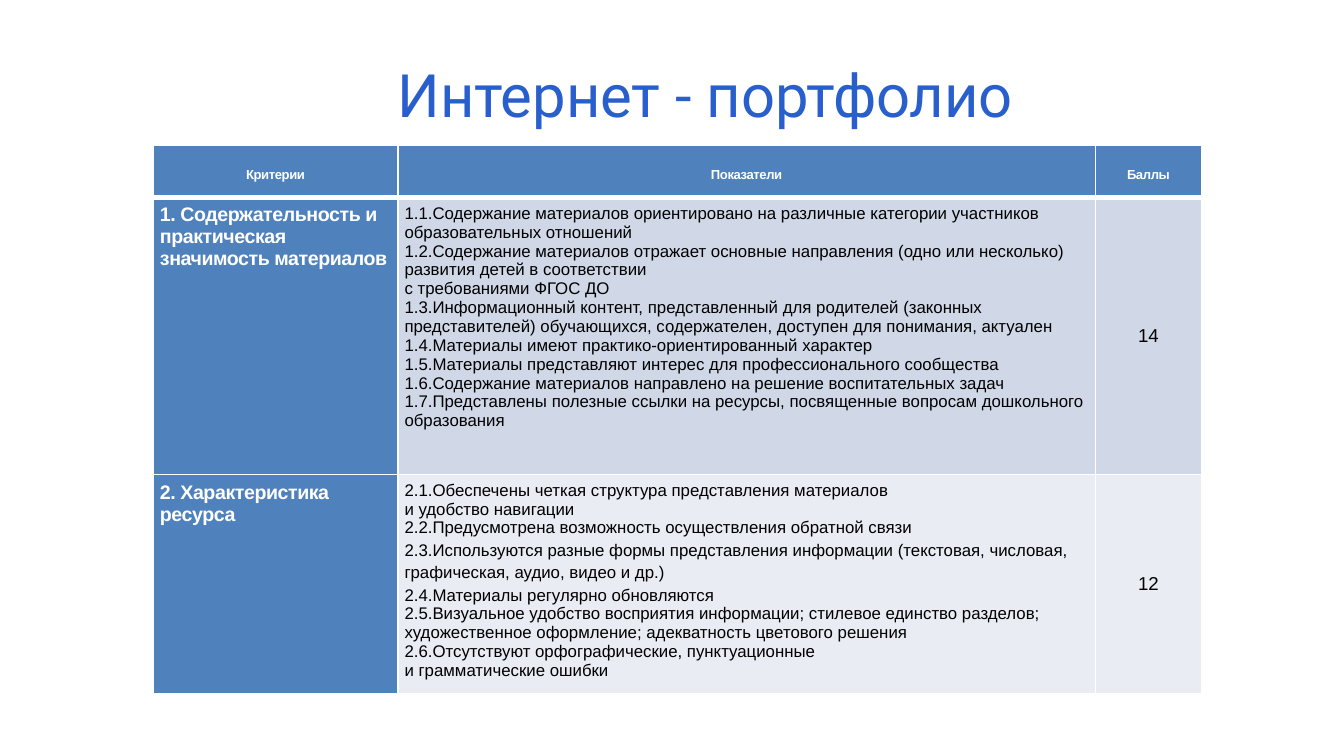
from lxml.etree import SubElement
from pptx import Presentation
from pptx.dml.color import RGBColor
from pptx.enum.text import MSO_ANCHOR, PP_ALIGN
from pptx.oxml.ns import qn
from pptx.util import Inches, Pt

WHITE = RGBColor(0xFF, 0xFF, 0xFF)
BLACK = RGBColor(0, 0, 0)
TITLE_BLUE = RGBColor(0x29, 0x5F, 0xCC)
HEADER_BLUE = RGBColor(0x4F, 0x81, 0xBD)
BAND_DARK = RGBColor(0xD0, 0xD8, 0xE7)
BAND_LIGHT = RGBColor(0xE9, 0xEC, 0xF3)

THIN, THICK = 0.96, 3
COLUMN_WIDTHS = [1.82, 5.19, 0.79]
ROW_HEIGHTS = [0.39, 2.06, 1.63]
HEADERS = ["Критерии", "Показатели", "Баллы"]

# Criterion, indicators, score, band colour
CRITERIA = [
    ("1.\u00a0Содержательность и практическая значимость материалов", [
        "1.1.Содержание материалов ориентировано на различные категории участников образовательных отношений",
        "1.2.Содержание материалов отражает основные направления (одно или несколько) "
        "развития детей в соответствии\vс требованиями ФГОС ДО",
        "1.3.Информационный контент, представленный для родителей (законных представителей) "
        "обучающихся, содержателен, доступен для понимания, актуален",
        "1.4.Материалы имеют практико-ориентированный характер",
        "1.5.Материалы представляют интерес для профессионального сообщества",
        "1.6.Содержание материалов направлено на решение воспитательных задач",
        "1.7.Представлены полезные ссылки на ресурсы, посвященные вопросам дошкольного образования",
    ], "14", BAND_DARK),
    ("2.\u00a0Характеристика ресурса", [
        "2.1.Обеспечены четкая структура представления материалов\vи удобство навигации",
        "2.2.Предусмотрена возможность осуществления обратной связи",
        "2.3.Используются разные формы представления информации "
        "(текстовая, числовая, графическая, аудио, видео и др.)",
        "2.4.Материалы регулярно обновляются",
        "2.5.Визуальное удобство восприятия информации; стилевое единство разделов; "
        "художественное оформление; адекватность цветового решения",
        "2.6.Отсутствуют орфографические, пунктуационные\vи грамматические ошибки",
    ], "12", BAND_LIGHT),
]
SPACED_LINES = ("2.\u00a0", "2.3.", "2.4.")  # paragraphs set on exact 12 pt lines


def add_title(slide, text):
    title = slide.shapes.title
    title.left, title.top = Inches(0.5), Inches(0.23)
    title.width, title.height = Inches(9), Inches(0.94)
    tf = title.text_frame
    tf.vertical_anchor = MSO_ANCHOR.MIDDLE
    p = tf.paragraphs[0]
    p.text = text
    p.alignment = PP_ALIGN.CENTER
    pPr = p._p.get_or_add_pPr()
    pPr.set("marL", str(Inches(0.5)))
    pPr.set("indent", "0")
    p.font.name, p.font.size = "Roboto", Pt(32)
    p.font.color.rgb = TITLE_BLUE


def set_borders(cell, top, bottom):
    """Draw white cell borders; call before the fill, which must follow them."""
    tcPr = cell._tc.get_or_add_tcPr()
    for side, width in zip("LRTB", (THIN, THIN, top, bottom)):
        ln = SubElement(tcPr, qn(f"a:ln{side}"), w=str(Pt(width)))
        fill = SubElement(ln, qn("a:solidFill"))
        SubElement(fill, qn("a:srgbClr"), val=str(WHITE))


def fill_cell(cell, lines, size, fill, heading=False, centered=False, top=THIN, bottom=THIN):
    set_borders(cell, top, bottom)
    cell.fill.solid()
    cell.fill.fore_color.rgb = fill
    cell.margin_left = cell.margin_right = Inches(0.05)
    cell.margin_top = cell.margin_bottom = Inches(0.05)
    cell.vertical_anchor = MSO_ANCHOR.MIDDLE if centered else MSO_ANCHOR.TOP
    tf = cell.text_frame
    for i, line in enumerate(lines):
        p = tf.add_paragraph() if i else tf.paragraphs[0]
        p.text = line
        p.alignment = PP_ALIGN.CENTER if centered else PP_ALIGN.LEFT
        if line in HEADERS or line.startswith(SPACED_LINES):
            p.line_spacing = Pt(12)
        p.font.name, p.font.size, p.font.bold = "Arial", Pt(size), heading
        p.font.color.rgb = WHITE if heading else BLACK
        if heading:
            for r in p.runs:
                r._r.get_or_add_rPr().set("spc", "-20")


def add_criteria_table(slide):
    table = slide.shapes.add_table(
        len(ROW_HEIGHTS), len(COLUMN_WIDTHS), Inches(1.14), Inches(1.08),
        Inches(sum(COLUMN_WIDTHS)), Inches(sum(ROW_HEIGHTS))).table
    for column, width in zip(table.columns, COLUMN_WIDTHS):
        column.width = Inches(width)
    for row, height in zip(table.rows, ROW_HEIGHTS):
        row.height = Inches(height)
    for col, header in enumerate(HEADERS):
        fill_cell(table.cell(0, col), [header], 7, HEADER_BLUE,
                  heading=True, centered=True, bottom=THICK)
    for row, (criterion, indicators, score, band) in enumerate(CRITERIA, 1):
        top = THICK if row == 1 else THIN
        fill_cell(table.cell(row, 0), [criterion], 10.5, HEADER_BLUE, heading=True, top=top)
        fill_cell(table.cell(row, 1), indicators, 9, band, top=top)
        fill_cell(table.cell(row, 2), [score], 10, band, centered=True, top=top)


def main():
    prs = Presentation()
    prs.slide_width = Inches(10)
    prs.slide_height = prs.slide_width * 9 // 16
    slide = prs.slides.add_slide(prs.slide_layouts[5])
    add_title(slide, "Интернет - портфолио")
    add_criteria_table(slide)
    prs.save("out.pptx")


if __name__ == "__main__":
    main()
